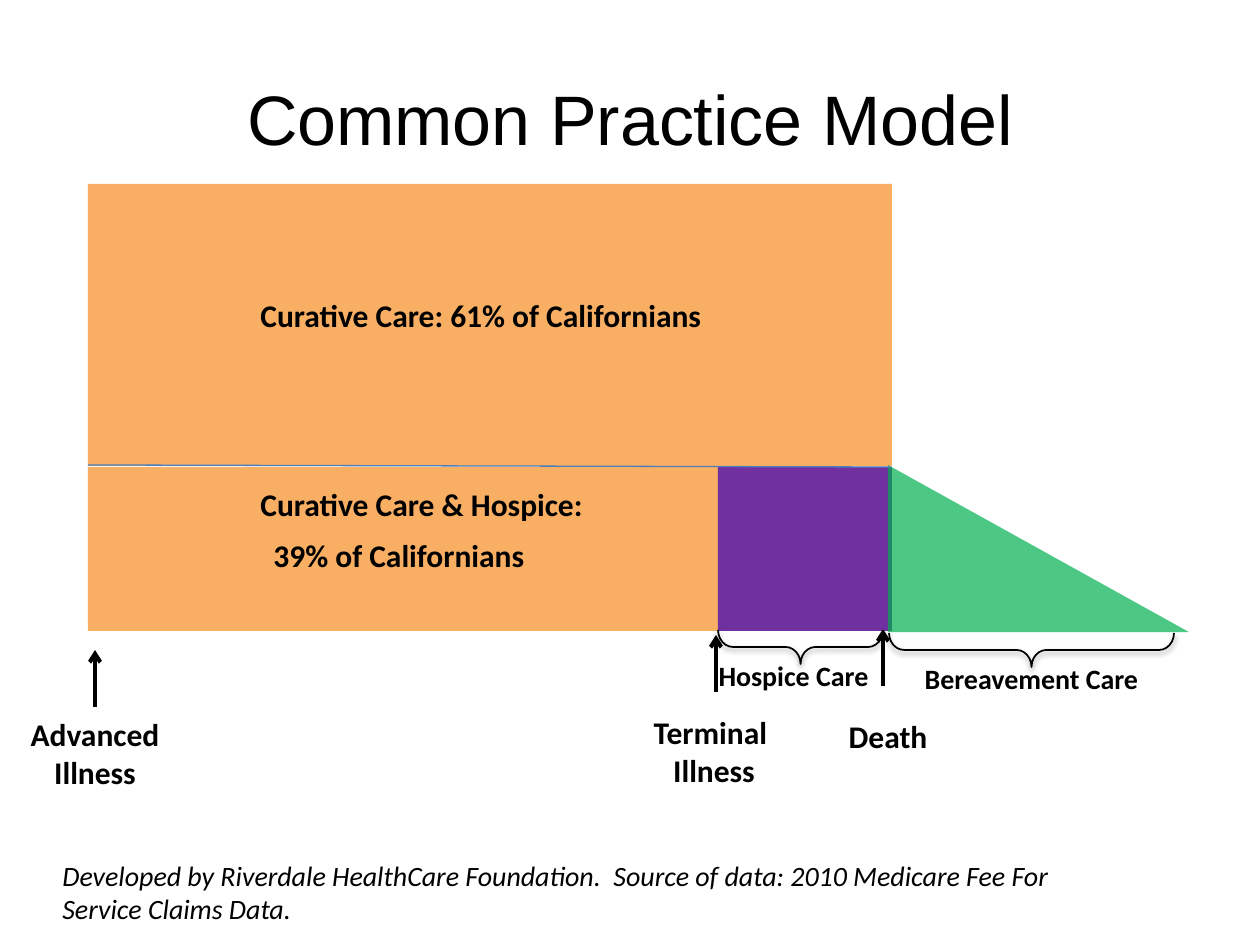
from lxml import etree
from pptx import Presentation
from pptx import util as u
from pptx.dml.color import RGBColor
from pptx.enum import shapes, text
from pptx.oxml import parse_xml
from pptx.oxml.ns import nsdecls, qn

PX = 914400 / 126  # EMU per px
BLACK, ORANGE, PURPLE, GREEN, BLUE = "000000", "F68E21", "7030A0", "00B050", "4B7EBC"
CENTER = text.PP_ALIGN.CENTER
KIND = shapes.MSO_SHAPE


def px(n):
    return u.Emu(round(n * PX))


def color(value):
    return RGBColor.from_string(value)


def add_text(s, box, *lines, size=18, font="Calibri", bold=True, italic=False,
             align=text.PP_ALIGN.LEFT, anchor=text.MSO_ANCHOR.TOP):
    tf = s.shapes.add_textbox(*map(px, box)).text_frame
    tf.word_wrap = True
    tf.vertical_anchor = anchor
    for i, line in enumerate(lines):
        p = tf.paragraphs[0] if i == 0 else tf.add_paragraph()
        p.alignment = align
        r = p.add_run()
        r.text = line
        r.font.name, r.font.size = font, u.Pt(size)
        r.font.bold, r.font.italic = bold, italic
        r.font.color.rgb = color(BLACK)


def add_area(s, kind, box, fill, opacity=100):
    sp = s.shapes.add_shape(kind, *map(px, box))
    sp.shadow.inherit = False
    sp.fill.solid()
    sp.fill.fore_color.rgb = color(fill)
    sp.line.fill.background()
    if opacity < 100:
        clr = sp.fill._xPr.find(qn("a:solidFill"))[0]
        etree.SubElement(clr, qn("a:alpha")).set("val", str(opacity * 1000))
    return sp


def add_line(s, start, end, line, width, arrow=False):
    c = s.shapes.add_connector(shapes.MSO_CONNECTOR.STRAIGHT, *map(px, start + end))
    c.line.color.rgb = color(line)
    c.line.width = u.Pt(width)
    if arrow:
        etree.SubElement(c.line._get_or_add_ln(), qn("a:tailEnd")).set("type", "arrow")
    etree.SubElement(c._element.spPr, qn("a:effectLst"))


def add_brace(s, left, top, width, depth=34):
    """Draw a brace that opens upwards: a right brace turned about its centre."""
    shift = (width - depth) / 2
    sp = s.shapes.add_shape(KIND.RIGHT_BRACE, px(left + shift), px(top - shift),
                            px(depth), px(width))
    sp.rotation = 90
    sp.adjustments[0] = 0.44
    sp.fill.background()
    sp.line.color.rgb = color(BLACK)
    sp.line.width = u.Pt(1)
    sp._element.spPr.append(parse_xml(
        f'<a:effectLst {nsdecls("a")}><a:outerShdw blurRad="40000" dist="20000" '
        f'dir="5400000" rotWithShape="0"><a:srgbClr val="{BLACK}">'
        '<a:alpha val="38000"/></a:srgbClr></a:outerShdw></a:effectLst>'))


def main():
    prs = Presentation()
    prs.slide_width, prs.slide_height = px(1260), px(945)
    s = prs.slides.add_slide(prs.slide_layouts[6])

    add_text(s, (0, 52, 1260, 132), "Common Practice Model", size=40, font="Arial",
             bold=False, align=CENTER, anchor=text.MSO_ANCHOR.MIDDLE)

    # Curative care for the majority
    add_area(s, KIND.RECTANGLE, (88, 184, 804, 282), ORANGE, 70)

    # Milestones on the time axis
    for box, lines in (((-15, 709, 220, 89), ["Advanced Illness"]),
                       ((630, 707, 168, 89), ["Terminal ", "Illness"]),
                       ((809, 711, 158, 50), ["Death"])):
        add_text(s, box, *lines, align=CENTER)
    for x, y in ((95, 650), (716, 635), (883, 629)):
        add_line(s, (x, y + 57), (x, y), BLACK, 2.25, arrow=True)

    # Curative care followed by hospice and bereavement care
    add_area(s, KIND.RECTANGLE, (88, 467, 630, 164), ORANGE, 70)
    add_area(s, KIND.RECTANGLE, (718, 467, 174, 164), PURPLE)
    add_text(s, (248, 290, 537, 50), "Curative Care: 61% of Californians")
    slope = add_area(s, KIND.ISOSCELES_TRIANGLE, (888, 465, 301, 167), GREEN, 70)
    slope.adjustments[0] = 0
    add_text(s, (248, 479, 626, 50), "Curative Care & Hospice:")
    add_text(s, (261, 530, 410, 50), "39% of Californians")
    add_line(s, (891, 467), (88, 465), BLUE, 0.75)

    # Source note
    add_text(s, (50, 852, 1023, 81),
             "Developed by Riverdale HealthCare Foundation.  Source of data: "
             "2010 Medicare Fee For Service Claims Data.",
             size=16, bold=False, italic=True)

    # Braces with their labels
    for label, box, brace in (
            ("Bereavement Care", (877, 655, 309, 47), (889, 633, 285)),
            ("Hospice Care", (639, 652, 309, 47), (718, 630, 165))):
        add_text(s, box, label, size=16, align=CENTER)
        add_brace(s, *brace)

    prs.save("out.pptx")


if __name__ == "__main__":
    main()
